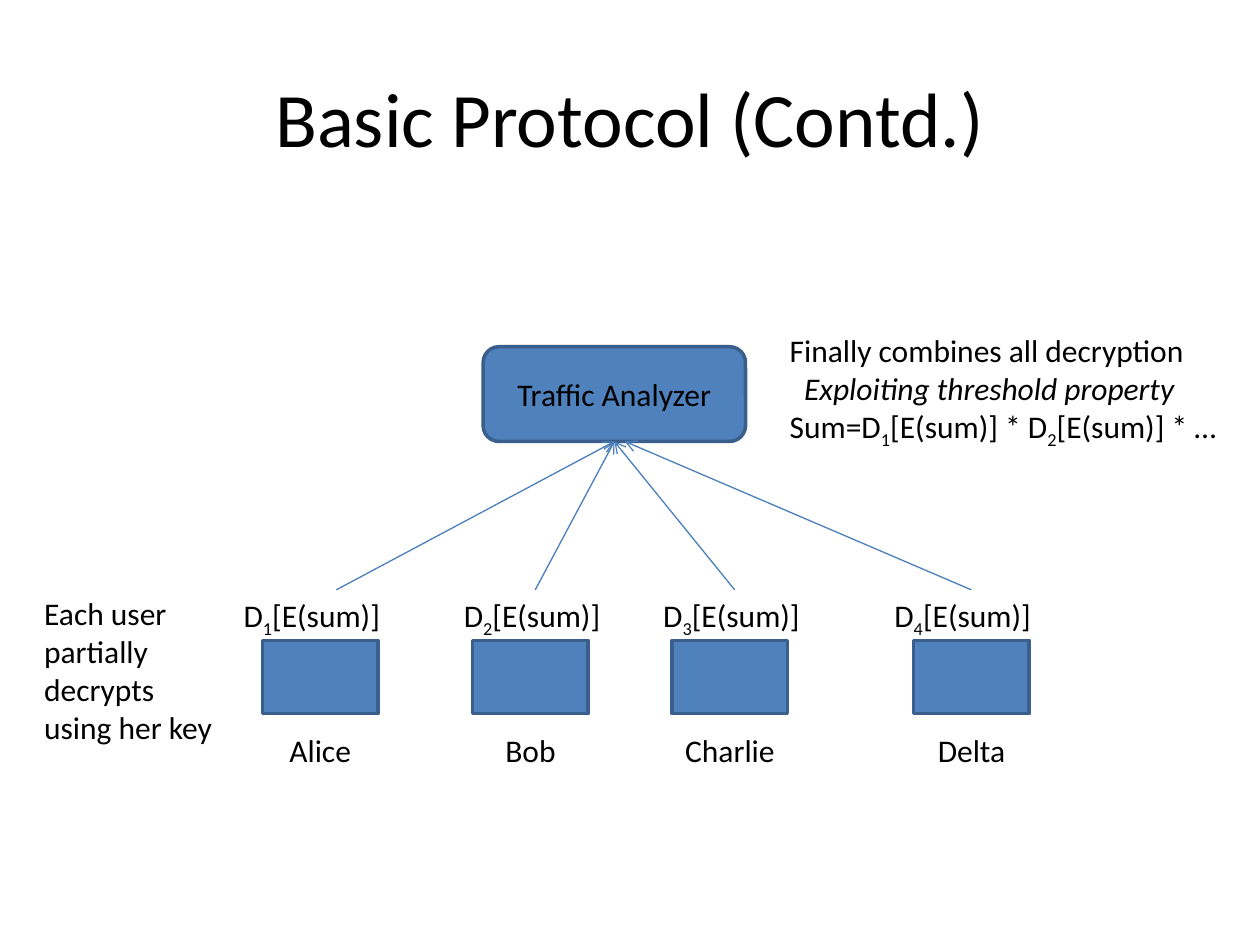
"""Build the slide on how users jointly decrypt a sum in the basic protocol."""
from lxml import etree
from pptx import Presentation, util as u
from pptx.dml import color
from pptx.enum import shapes, text
from pptx.oxml import ns

TITLE = "Basic Protocol (Contd.)"
USERS = [
    {"name": "Alice", "box": 5.29, "label": 4.66, "width": 3.38, "start": 6.78},
    {"name": "Bob", "box": 9.53, "label": 9.1, "width": 3.38},
    {"name": "Charlie", "box": 13.55, "label": 13.12, "width": 3.38},
    {"name": "Delta", "box": 18.42, "label": 17.78, "width": 3.6, "end": 12.6},
]
USER_NOTE = [["Each user partially decrypts"], ["using her key"]]
RESULT_NOTE = [
    ["Finally combines all decryption"],
    [("Exploiting threshold property", "italic")],
    ["Sum=D", ("1", "sub"), "[E(sum)] * D", ("2", "sub"), "[E(sum)] * …"],
]
BOX_WIDTH, BOX_HEIGHT, BOX_TOP = 2.33, 1.48, 12.91
LABEL_TOP, NAME_TOP, LINE_HEIGHT = 11.89, 14.61, 1.02
ANALYZER = (9.74, 6.99, 5.29, 1.91)
ANALYZER_BOTTOM = ANALYZER[1] + ANALYZER[3]


def rgb(value):
    return color.RGBColor.from_string(value)


def lengths(*values):
    return [u.Cm(value) for value in values]


def write(shape, paragraphs, size=18, align=text.PP_ALIGN.LEFT,
          anchor=text.MSO_ANCHOR.TOP, wrap=True, indents=()):
    frame = shape.text_frame
    frame.word_wrap = wrap
    frame.vertical_anchor = anchor
    for index, parts in enumerate(paragraphs):
        para = frame.paragraphs[0] if index == 0 else frame.add_paragraph()
        para.alignment = align
        if index in indents:
            para._p.get_or_add_pPr().set("marL", str(u.Cm(0.29)))
        for part in parts:
            words, style = (part, "") if isinstance(part, str) else part
            span = para.add_run()
            span.text = words
            span.font.name = "Calibri"
            span.font.size = u.Pt(size)
            span.font.color.rgb = rgb("000000")
            if style == "italic":
                span.font.italic = True
            if style == "sub":
                span._r.get_or_add_rPr().set("baseline", "-25000")


def add_text(page, place, paragraphs, **formats):
    box = page.shapes.add_textbox(*lengths(*place))
    write(box, paragraphs, **formats)
    return box


def add_box(page, kind, place):
    box = page.shapes.add_shape(kind, *lengths(*place))
    box.shadow.inherit = False
    box.fill.solid()
    box.fill.fore_color.rgb = rgb("4F81BD")
    box.line.color.rgb = rgb("3A5F8C")
    box.line.width = u.Pt(2)
    return box


def add_arrow(page, user, label, analyzer):
    start = user.get("start", user["label"] + user["width"] / 2)
    end = user.get("end", ANALYZER[0] + ANALYZER[2] / 2)
    arrow = page.shapes.add_connector(
        shapes.MSO_CONNECTOR.STRAIGHT,
        *lengths(start, LABEL_TOP, end, ANALYZER_BOTTOM))
    if "start" not in user:
        arrow.begin_connect(label, 0)
    if "end" not in user:
        arrow.end_connect(analyzer, 2)
    arrow.line.color.rgb = rgb("4B7EBC")
    arrow.line.width = u.Pt(0.75)
    etree.SubElement(arrow.line._get_or_add_ln(), ns.qn("a:tailEnd"), type="arrow")
    etree.SubElement(arrow._element.spPr, ns.qn("a:effectLst"))


def main():
    deck = Presentation()
    deck.slide_width, deck.slide_height = lengths(25.4, 19.05)
    page = deck.slides.add_slide(deck.slide_layouts[6])
    center, middle = text.PP_ALIGN.CENTER, text.MSO_ANCHOR.MIDDLE

    add_text(page, (1.27, 0.76, 22.86, 3.18), [[TITLE]],
             size=44, align=center, anchor=middle)
    analyzer = add_box(page, shapes.MSO_SHAPE.ROUNDED_RECTANGLE, ANALYZER)
    write(analyzer, [["Traffic Analyzer"]], align=center, anchor=middle)

    for number, user in enumerate(USERS, 1):
        add_box(page, shapes.MSO_SHAPE.RECTANGLE,
                (user["box"], BOX_TOP, BOX_WIDTH, BOX_HEIGHT))
        add_text(page, (user["box"], NAME_TOP, BOX_WIDTH, LINE_HEIGHT),
                 [[user["name"]]], align=center, wrap=False)
        label = add_text(
            page, (user["label"], LABEL_TOP, user["width"], LINE_HEIGHT),
            [["D", (str(number), "sub"), "[E(sum)]"]])
        add_arrow(page, user, label, analyzer)

    add_text(page, (0.64, 11.86, 4.01, 3.33), USER_NOTE)
    add_text(page, (15.67, 6.55, 9.32, 2.57), RESULT_NOTE, indents=(1,))
    deck.save("out.pptx")


if __name__ == "__main__":
    main()
